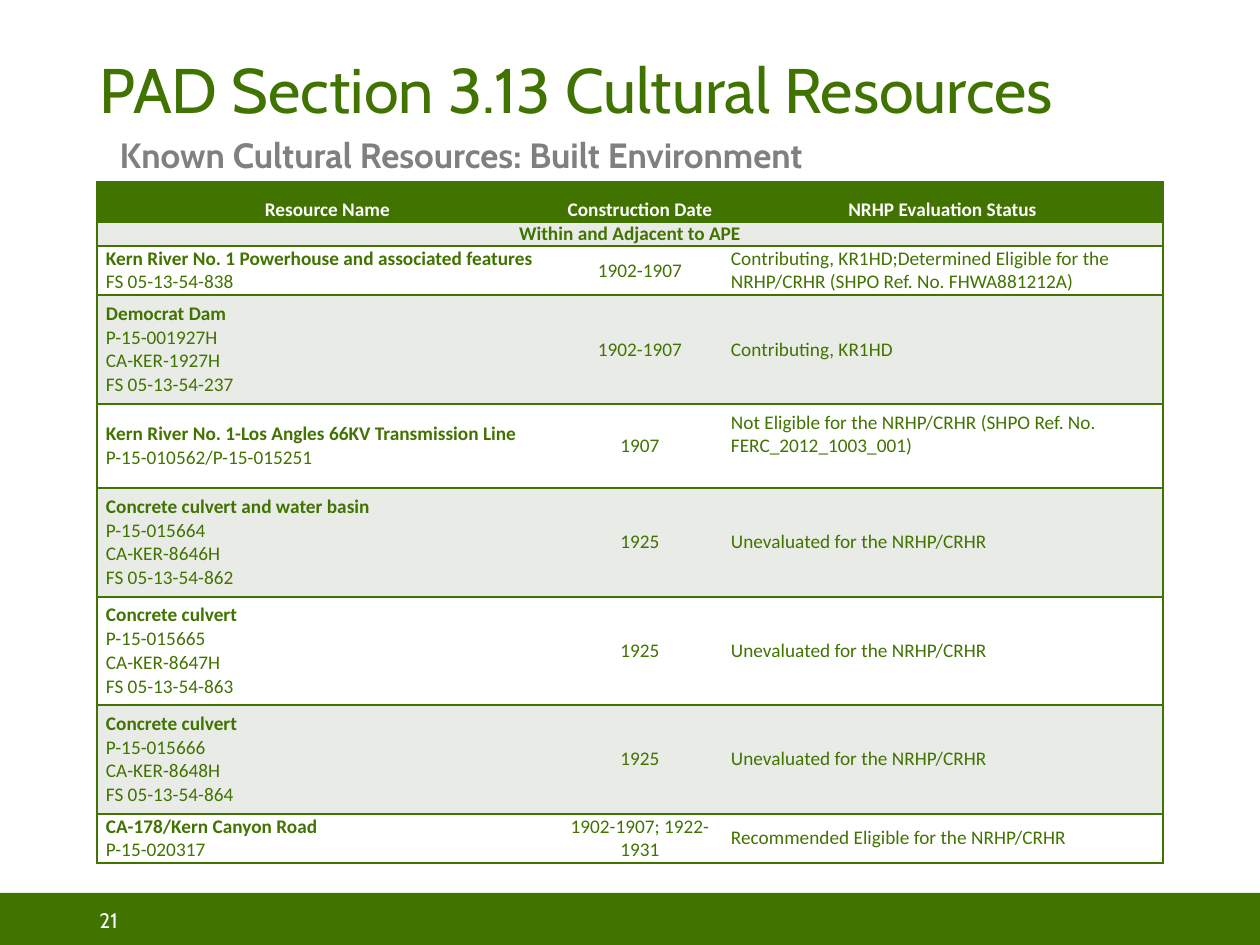
from lxml import etree
from pptx import Presentation
from pptx.dml.color import RGBColor
from pptx.enum.shapes import MSO_SHAPE
from pptx.enum.text import MSO_ANCHOR, MSO_AUTO_SIZE, PP_ALIGN
from pptx.oxml.ns import qn
from pptx.util import Pt

RECT = MSO_SHAPE.RECTANGLE
MID, LOW, TOP = MSO_ANCHOR.MIDDLE, MSO_ANCHOR.BOTTOM, MSO_ANCHOR.TOP
LEFT, MIDST = PP_ALIGN.LEFT, PP_ALIGN.CENTER
COLORS = {"green": "417300", "gray": "808080", "pale": "E9EBE7", "white": "FFFFFF"}
HEAD, BODY = "Cabin", "Calibri"
LINE = 23  # height of one line of table text

HEADS = ["Resource Name", "Construction Date", "NRHP Evaluation Status"]
BAND = "Within and Adjacent to APE"
OPEN = "Unevaluated for the NRHP/CRHR"
# name, paragraphs of record numbers, date, status
SITES = [
    ("Kern River No. 1 Powerhouse and associated features", ["FS 05-13-54-838"], "1902-1907",
     "Contributing, KR1HD;Determined Eligible for the NRHP/CRHR (SHPO Ref. No. FHWA881212A)"),
    ("Democrat Dam", ["P-15-001927H", "CA-KER-1927H\vFS 05-13-54-237"], "1902-1907",
     "Contributing, KR1HD"),
    ("Kern River No. 1-Los Angles 66KV Transmission Line", ["P-15-010562/P-15-015251"], "1907",
     "Not Eligible for the NRHP/CRHR (SHPO Ref. No. FERC_2012_1003_001)"),
    ("Concrete culvert and water basin", ["P-15-015664", "CA-KER-8646H\vFS 05-13-54-862"],
     "1925", OPEN),
    ("Concrete culvert", ["P-15-015665", "CA-KER-8647H\vFS 05-13-54-863"], "1925", OPEN),
    ("Concrete culvert", ["P-15-015666", "CA-KER-8648H\vFS 05-13-54-864"], "1925", OPEN),
    ("CA-178/Kern Canyon Road", ["P-15-020317"], "1902-1907; 1922-1931",
     "Recommended Eligible for the NRHP/CRHR"),
]
RAISED = 2  # site whose status sits one line higher
COLS = [461, 164, 441]
ROWS = [40, 24, 49, 109, 84, 109, 108, 109, 49]


def px(n):
    return round(n * 914400 / 126)


def color(key):
    return RGBColor.from_string(COLORS[key])


def style(para, size, key, face, bold=False, align=LEFT):
    para.alignment = align
    font = para.font
    font.size, font.name, font.bold = Pt(size), face, bold
    font.color.rgb = color(key)


def place(shape, box):
    shape.left, shape.top, shape.width, shape.height = map(px, box)


def add_title(slide, box, text):
    shape = slide.shapes.title
    place(shape, box)
    frame = shape.text_frame
    frame.text = text
    frame.auto_size = MSO_AUTO_SIZE.NONE
    frame.vertical_anchor = MID
    para = frame.paragraphs[0]
    para.line_spacing = 0.9
    style(para, 36, "green", HEAD)


def add_body(slide, box, text):
    shape = slide.placeholders[1]
    place(shape, box)
    frame = shape.text_frame
    frame.text = text
    frame.auto_size = MSO_AUTO_SIZE.NONE
    para = frame.paragraphs[0]
    para.level = 1
    para.line_spacing = 1.1
    para.space_before, para.space_after = Pt(0), Pt(12)
    props = para._p.get_or_add_pPr()
    props.set("marL", "0")
    props.set("indent", "0")
    etree.SubElement(props, qn("a:buNone"))
    style(para, 20, "gray", HEAD, True)


def add_foot(slide, box, text):
    x, y, w, h = box
    bar = slide.shapes.add_shape(RECT, *map(px, box))
    bar.shadow.inherit = False
    bar.fill.solid()
    bar.fill.fore_color.rgb = color("green")
    bar.line.fill.background()
    # Page number
    label = slide.shapes.add_textbox(*map(px, (x + 87, y + 2, 283, h - 2)))
    frame = label.text_frame
    frame.word_wrap = True
    frame.vertical_anchor = MID
    frame.text = text
    style(frame.paragraphs[0], 12, "white", HEAD)


def rule(cell, sides):
    props = cell._tc.get_or_add_tcPr()
    for side in "LRTB":
        line = etree.SubElement(props, qn("a:ln" + side), w=str(Pt(1)))
        if side in sides:
            fill = etree.SubElement(line, qn("a:solidFill"))
            etree.SubElement(fill, qn("a:srgbClr"), val=COLORS["green"])
        else:
            etree.SubElement(line, qn("a:noFill"))


def dress(cell, sides, back, anchor):
    rule(cell, sides)
    cell.fill.solid()
    cell.fill.fore_color.rgb = color(back)
    cell.vertical_anchor = anchor
    cell.margin_left = cell.margin_right = px(9)
    cell.margin_top = cell.margin_bottom = 0


def write(cell, text, key="green", bold=False, align=LEFT):
    cell.text = text
    style(cell.text_frame.paragraphs[0], 11, key, BODY, bold, align)


def write_name(cell, name, codes):
    frame = cell.text_frame
    para = frame.paragraphs[0]
    run = para.add_run()
    run.text = name
    run.font.bold = True
    para.add_line_break()
    para.add_run().text = codes[0]
    for code in codes[1:]:
        frame.add_paragraph().text = code
    for para in frame.paragraphs:
        style(para, 11, "green", BODY)


def add_grid(slide, box):
    table = slide.shapes.add_table(len(ROWS), len(COLS), *map(px, box)).table
    table.first_row = table.horz_banding = False
    for col, width in zip(table.columns, COLS):
        col.width = px(width)
    for row, height in zip(table.rows, ROWS):
        row.height = px(height)
    edges = ["LTB", "TB", "RTB"]

    # Heading row
    for i, text in enumerate(HEADS):
        cell = table.cell(0, i)
        dress(cell, edges[i], "green", LOW)
        write(cell, text, "white", True, MIDST)

    # Band across all columns
    band = table.cell(1, 0)
    band.merge(table.cell(1, 2))
    dress(band, "LRTB", "pale", TOP)
    write(band, BAND, bold=True, align=MIDST)

    # One row for each site
    for n, (name, codes, date, status) in enumerate(SITES):
        cells = table.rows[n + 2].cells
        for cell, sides in zip(cells, edges):
            dress(cell, sides, "pale" if n % 2 else "white", MID)
        write_name(cells[0], name, codes)
        write(cells[1], date, align=MIDST)
        write(cells[2], status)
        if n == RAISED:
            cells[2].margin_bottom = px(LINE)


def main():
    deck = Presentation()
    deck.slide_width, deck.slide_height = px(1260), px(945)
    slide = deck.slides.add_slide(deck.slide_layouts[1])
    add_foot(slide, (0, 893, 1260, 52), "21")
    add_title(slide, (87, 35, 1086, 116), "PAD Section 3.13 Cultural Resources")
    add_body(slide, (107, 123, 1086, 673), "Known Cultural Resources: Built Environment")
    add_grid(slide, (97, 182, sum(COLS), sum(ROWS)))
    deck.save("out.pptx")


if __name__ == "__main__":
    main()
